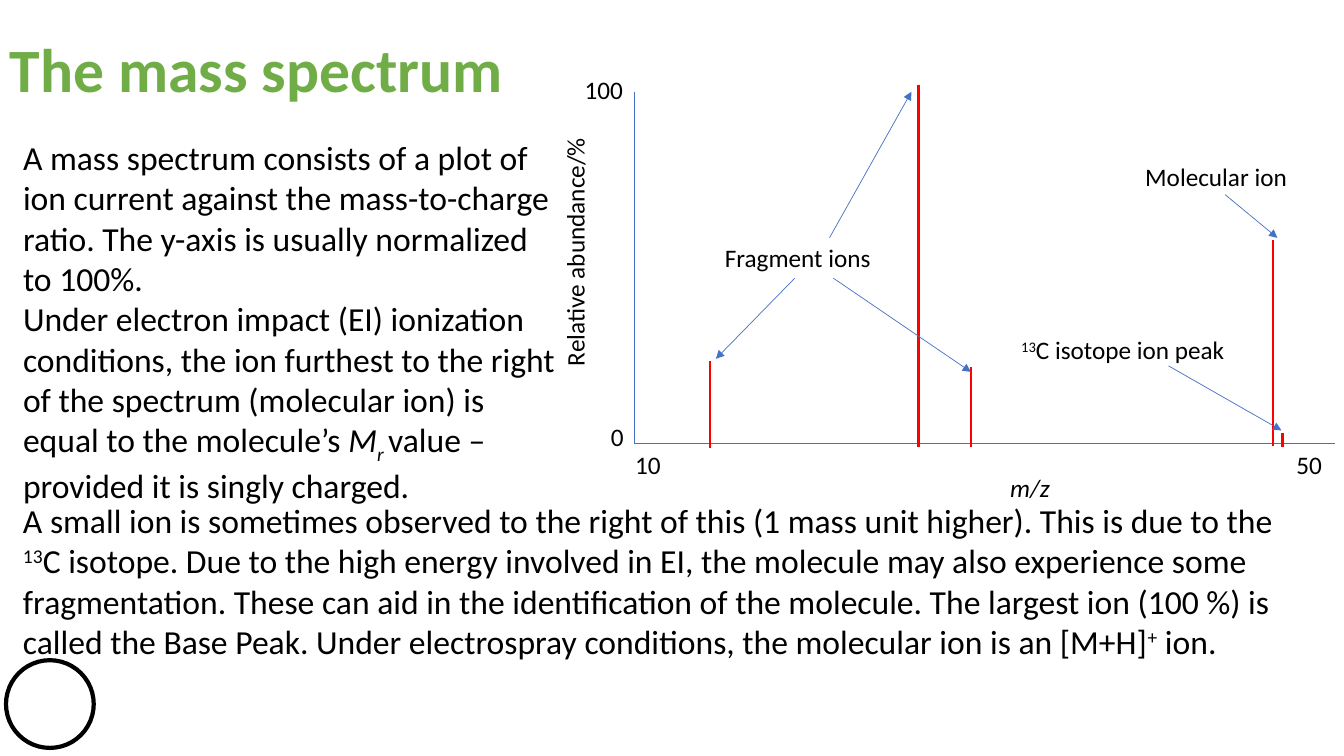
from dataclasses import dataclass

from lxml.etree import SubElement
from pptx import Presentation
from pptx.dml.color import RGBColor
from pptx.enum.shapes import MSO_CONNECTOR, MSO_SHAPE
from pptx.enum.text import MSO_ANCHOR, PP_ALIGN
from pptx.oxml.ns import qn
from pptx.util import Inches, Pt


@dataclass(frozen=True)
class Theme:
    font: str = "Calibri"
    title_size: int = 44
    body_size: int = 24
    label_size: int = 18
    green: RGBColor = RGBColor(0x70, 0xAD, 0x47)
    blue: RGBColor = RGBColor(0x44, 0x72, 0xC4)
    red: RGBColor = RGBColor(0xFF, 0, 0)
    black: RGBColor = RGBColor(0, 0, 0)
    white: RGBColor = RGBColor(0xFF, 0xFF, 0xFF)


theme = Theme()
NORMAL, SUPER, SUB = 0, 30000, -25000

prs = Presentation()
prs.slide_width, prs.slide_height = Inches(13.33), Inches(7.5)
slide = prs.slides.add_slide(prs.slide_layouts[6])


def add_text(box, paragraphs, size, color=theme.black, bold=False):
    """Fill a new text box; each run is (text, baseline, italic)."""
    shape = slide.shapes.add_textbox(*map(Inches, box))
    frame = shape.text_frame
    frame.word_wrap = True
    for index, runs in enumerate(paragraphs):
        paragraph = frame.paragraphs[0] if index == 0 else frame.add_paragraph()
        paragraph.alignment = PP_ALIGN.LEFT
        for text, baseline, italic in runs:
            run = paragraph.add_run()
            run.text = text
            if baseline:
                run._r.get_or_add_rPr().set("baseline", str(baseline))
            style = {"name": theme.font, "size": Pt(size), "bold": bold, "italic": italic}
            for attribute, value in style.items():
                setattr(run.font, attribute, value)
            run.font.color.rgb = color
    return shape


def add_line(start, end, color, width, arrow=False):
    line = slide.shapes.add_connector(
        MSO_CONNECTOR.STRAIGHT, *map(Inches, (*start, *end)))
    line.line.color.rgb = color
    line.line.width = Pt(width)
    if arrow:
        SubElement(line.line._get_or_add_ln(), qn("a:tailEnd"), type="triangle")
    SubElement(line._element.spPr, qn("a:effectLst"))


# Corner circle and title
circle = slide.shapes.add_shape(
    MSO_SHAPE.OVAL, *map(Inches, (0.06, 6.55, 0.87, 0.87)))
circle.shadow.inherit = False
circle.fill.solid()
circle.fill.fore_color.rgb = theme.white
circle.line.color.rgb = theme.black
circle.line.width = Pt(3)

title = add_text((0, -0.01, 12.42, 1.45), [[("The mass spectrum", NORMAL, False)]],
                 theme.title_size, theme.green, bold=True)
title.text_frame.vertical_anchor = MSO_ANCHOR.MIDDLE
title.text_frame.paragraphs[0].line_spacing = 0.9

# Axes, peaks and arrows of the spectrum
origin = (6.29, 4.4)
for axis_end in [(6.29, 0.91), (13.24, 4.4)]:
    add_line(axis_end, origin, theme.blue, 0.5)

peaks = [  # m/z position, top, foot
    (12.63, 2.38, 4.42),
    (12.72, 4.3, 4.43),
    (9.11, 0.84, 4.43),
    (9.63, 3.64, 4.43),
    (7.04, 3.58, 4.44),
]
for x, top, foot in peaks:
    add_line((x, top), (x, foot), theme.red, 1.5)

arrows = [
    ((12.15, 1.93), (12.67, 2.36)),
    ((11.59, 3.63), (12.71, 4.27)),
    ((8.02, 2.62), (7.1, 3.56)),
    ((8.09, 2.64), (9.63, 3.69)),
    ((8.07, 2.64), (9.04, 0.91)),
]
for start, end in arrows:
    add_line(start, end, theme.blue, 0.5, arrow=True)

# Labels of the spectrum
labels = [  # left, top, width, runs
    (9.92, 4.64, 1.38, [("m/z", NORMAL, True)]),
    (5.7, 0.69, 0.72, [("100", NORMAL, False)]),
    (5.96, 4.13, 0.72, [("0", NORMAL, False)]),
    (6.2, 4.41, 0.72, [("10", NORMAL, False)]),
    (12.76, 4.41, 0.72, [("50", NORMAL, False)]),
    (11.26, 1.55, 1.69, [("Molecular ion", NORMAL, False)]),
    (10.03, 3.27, 2.33, [("13", SUPER, False), ("C isotope ion peak", NORMAL, False)]),
]
for left, top, width, runs in labels:
    add_text((left, top, width, 0.4), [runs], theme.label_size)

abundance = add_text((3.78, 1.61, 3.84, 0.4),
                     [[("Relative abundance/%", NORMAL, False)]], theme.label_size)
abundance.rotation = 270

fragments = add_text((7.09, 2.36, 1.69, 0.4),
                     [[("Fragment ions", NORMAL, False)]], theme.label_size)
fragments.fill.solid()
fragments.fill.fore_color.rgb = theme.white

# Explanation
add_text((0.13, 1.31, 5.48, 3.74), [
    [("A mass spectrum consists of a plot of ion current against the "
      "mass-to-charge ratio. The y-axis is usually normalized to 100%.", NORMAL, False)],
    [("Under electron impact (EI) ionization conditions, the ion furthest to the "
      "right of the spectrum (molecular ion) is equal to the molecule’s ", NORMAL, False),
     ("M", NORMAL, True),
     ("r ", SUB, True),
     ("value – provided it is singly charged.", NORMAL, False)],
], theme.body_size)

add_text((0.13, 4.91, 12.96, 1.72), [
    [("A small ion is sometimes observed to the right of this (1 mass unit higher). "
      "This is due to the ", NORMAL, False),
     ("13", SUPER, False),
     ("C isotope. Due to the high energy involved in EI, the molecule may also "
      "experience some fragmentation. These can aid in the identification of the "
      "molecule. The largest ion (100 %) is called the Base Peak. Under electrospray "
      "conditions, the molecular ion is an [M+H]", NORMAL, False),
     ("+", SUPER, False),
     (" ion.", NORMAL, False)],
], theme.body_size)

prs.save("out.pptx")
